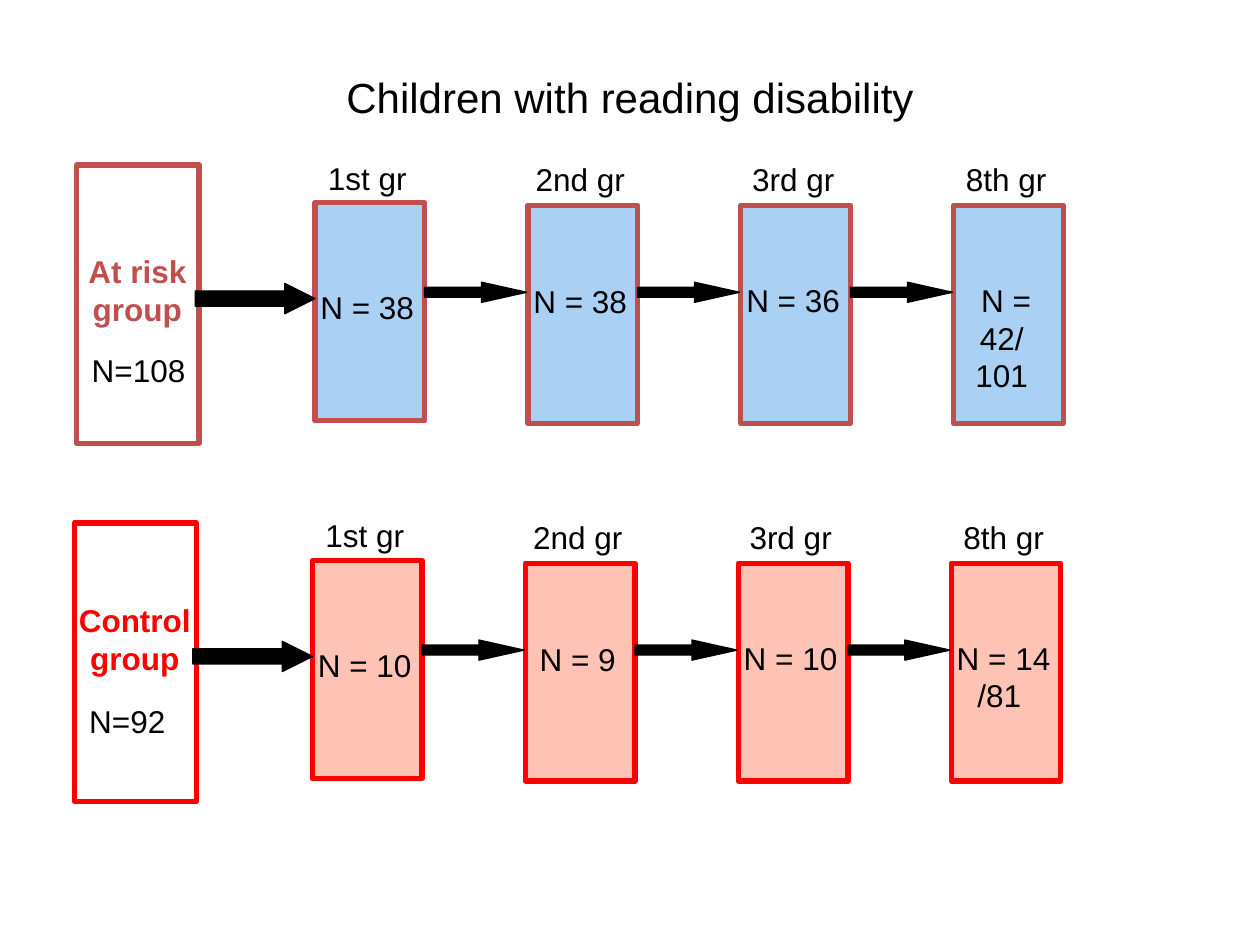
import dataclasses

import pptx
import pptx.dml.color
import pptx.enum.shapes
import pptx.enum.text
import pptx.oxml
import pptx.oxml.ns
import pptx.util

Inches = pptx.util.Inches
SHAPES = pptx.enum.shapes.MSO_SHAPE
ALIGN = pptx.enum.text.PP_ALIGN
COLORS = {"black": "000000", "risk": "C0504D", "sky": "AAD1F4",
          "control": "FF0000", "coral": "FF3300"}
GRADES = ("1st gr", "2nd gr", "3rd gr", "8th gr")
DROPS = (0, 0.02, 0.02, 0.02)
COUNT_TOPS = (0.93, 0.88, 0.87, 0.87)
PITCH = 1.69


@dataclasses.dataclass
class Group:
    name: str
    total: str
    counts: tuple[str, ...]
    left: float
    top: float
    color: str
    fill: str
    name_top: float
    name_width: float
    total_top: float
    alpha: int = 100


GROUPS = (
    Group("At risk group", "N=108", (" N = 38", " N = 38", " N = 36", " N = 42/\n101"),
          0.61, 1.31, "risk", "sky", 0.64, 1.02, 1.43),
    Group("Control group", "N=92", (" N = 10", " N = 9", " N = 10", " N = 14\n/81"),
          0.59, 4.15, "control", "coral", 0.57, 1.22, 1.37, alpha=29),
)


def rgb(name: str) -> pptx.dml.color.RGBColor:
    return pptx.dml.color.RGBColor.from_string(COLORS[name])


def add_text(s, text: str, x: float, y: float, w: float, h: float = 0.4, *,
             size: int = 18, color: str = "black", bold: bool = False,
             align=ALIGN.CENTER) -> None:
    tf = s.shapes.add_textbox(Inches(x), Inches(y), Inches(w), Inches(h)).text_frame
    tf.word_wrap = True
    tf.auto_size = pptx.enum.text.MSO_AUTO_SIZE.SHAPE_TO_FIT_TEXT
    tf.text = text
    for p in tf.paragraphs:
        p.alignment = align
        for r in p.runs:
            r.font.name, r.font.size, r.font.bold = "Arial", pptx.util.Pt(size), bold
            r.font.color.rgb = rgb(color)


def add_shape(s, kind, x: float, y: float, w: float, h: float, *, line: str,
              fill: str | None = None, alpha: int = 100, width: float = 3):
    sp = s.shapes.add_shape(kind, Inches(x), Inches(y), Inches(w), Inches(h))
    sp.shadow.inherit = False
    sp.line.color.rgb = rgb(line)
    sp.line.width = pptx.util.Pt(width)
    if fill is None:
        sp.fill.background()
        return sp
    sp.fill.solid()
    sp.fill.fore_color.rgb = rgb(fill)
    if alpha < 100:
        clr = sp._element.spPr.find(pptx.oxml.ns.qn("a:solidFill"))[0]
        clr.append(pptx.oxml.parse_xml(
            f'<a:alpha {pptx.oxml.ns.nsdecls("a")} val="{alpha * 1000}"/>'))
    return sp


def add_arrow(s, x: float, y: float, w: float, h: float, head: float) -> None:
    sp = add_shape(s, SHAPES.RIGHT_ARROW, x, y, w, h, line="black", fill="black", width=0.75)
    sp.adjustments[0], sp.adjustments[1] = 0.5, head


def add_group(s, g: Group) -> None:
    add_shape(s, SHAPES.RECTANGLE, g.left, g.top, 0.97, 2.21, line=g.color)
    lefts = [g.left + 1.89 + i * PITCH for i in range(len(GRADES))]
    for x, drop in zip(lefts, DROPS):
        add_shape(s, SHAPES.RECTANGLE, x, g.top + 0.3 + drop, 0.87, 1.73,
                  line=g.color, fill=g.fill, alpha=g.alpha)
    add_arrow(s, g.left + 0.94, g.top + 0.94, 0.95, 0.24, 1)
    for x in lefts[:-1]:
        add_arrow(s, x + 0.87, g.top + 0.93, 0.81, 0.16, 2.24)
    add_text(s, g.name, g.left + 0.48 - g.name_width / 2, g.top + g.name_top,
             g.name_width, 0.71, color=g.color, bold=True)
    add_text(s, g.total, g.left + 0.02, g.top + g.total_top, 0.94, align=ALIGN.LEFT)
    for x, grade, drop, count, y in zip(lefts, GRADES, DROPS, g.counts, COUNT_TOPS):
        add_text(s, grade, x - 0.06, g.top - 0.1 + drop / 2, 0.95)
        add_text(s, count, x - 0.13, g.top + y, 1.02, 0.86 if "\n" in count else 0.4)


def main() -> None:
    """Build the reading disability slide and save it."""
    prs = pptx.Presentation()
    prs.slide_width, prs.slide_height = Inches(10), Inches(7.5)
    s = prs.slides.add_slide(prs.slide_layouts[6])
    add_text(s, "Children with reading disability", 1.81, 0.52, 6.38, 0.51, size=24)
    for g in GROUPS:
        add_group(s, g)
    prs.save("out.pptx")


if __name__ == "__main__":
    main()
